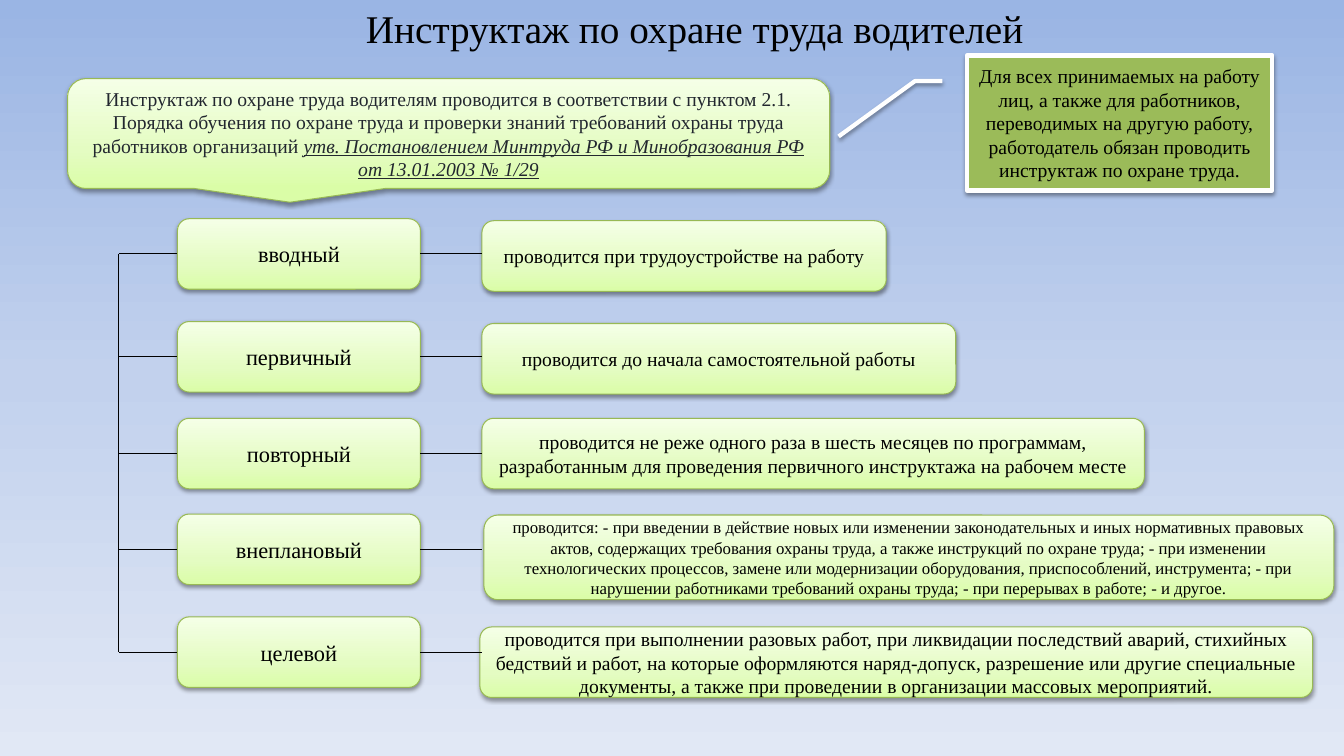
from pptx import Presentation
from pptx.dml.color import RGBColor
from pptx.enum.shapes import MSO_CONNECTOR, MSO_SHAPE as Preset
from pptx.enum.text import MSO_ANCHOR as Anchor, MSO_AUTO_SIZE as AutoSize, PP_ALIGN as Align
from pptx.oxml import parse_xml
from pptx.oxml.ns import nsdecls, qn
from pptx.util import Pt
from dataclasses import dataclass

EMU_PER_PX = 9144  # 100 px to the inch


@dataclass(frozen=True)
class Theme:
    font: str = "Times New Roman"
    text: str = "000000"
    law_text: str = "22272F"
    line: str = "000000"
    green_line: str = "98B955"
    note_fill: str = "9BBB59"
    note_line: str = "FFFFFF"
    background: tuple = ((0, "9AB5E4"), (50, "C2D1ED"), (100, "E1E8F5"))
    green: tuple = ((0, "DAFDA7"), (35, "E4FCC2"), (100, "F5FFE7"))
    title_size: int = 28
    type_size: int = 16
    body_size: int = 14
    small_size: int = 12
    thin: float = 0.75
    thick: float = 3


THEME = Theme()

TITLE = "Инструктаж по охране труда водителей"
LAW = ("Инструктаж по охране труда водителям проводится в соответствии с пунктом 2.1. "
       "Порядка обучения по охране труда и проверки знаний требований охраны труда "
       "работников организаций ")
LAW_SOURCE = ("утв. Постановлением Минтруда РФ и Минобразования РФ\v"
              "от 13.01.2003 № 1/29")
NOTE = ("Для всех принимаемых на работу лиц, а также для работников, переводимых на "
        "другую работу, работодатель обязан проводить инструктаж по охране труда.")

# Rows: type, its top, detail, box of the detail, text size of the detail
ROWS = [
    ("вводный", 217, "проводится при трудоустройстве на работу",
     (478, 219, 401, 70), THEME.body_size),
    ("первичный", 319, "проводится до начала самостоятельной работы",
     (478, 321, 470, 70), THEME.body_size),
    ("повторный", 415,
     "проводится не реже одного раза в шесть месяцев по программам, разработанным "
     "для проведения первичного инструктажа на рабочем месте",
     (478, 415, 657, 70), THEME.body_size),
    ("внеплановый", 510,
     "проводится: - при введении в действие новых или изменении законодательных и "
     "иных нормативных правовых актов, содержащих требования охраны труда, а также "
     "инструкций по охране труда; - при изменении технологических процессов, замене "
     "или модернизации оборудования, приспособлений, инструмента; - при нарушении "
     "работниками требований охраны труда; - при перерывах в работе; - и другое.",
     (480, 511, 843, 84), THEME.small_size),
    ("целевой", 612,
     "проводится при выполнении разовых работ, при ликвидации последствий аварий, "
     "стихийных бедствий и работ, на которые оформляются наряд-допуск, разрешение "
     "или другие специальные документы, а также при проведении в организации "
     "массовых мероприятий.",
     (476, 622, 826, 70), THEME.body_size),
]
TYPE_LEFT, TYPE_WIDTH, TYPE_HEIGHT = 176, 241, 70
TRUNK_X = 118
LINK_END = 478
LEFT_SIDE, RIGHT_SIDE = 1, 3


def px(*lengths):
    return [length * EMU_PER_PX for length in lengths]


def rgb(value):
    return RGBColor.from_string(value)


def set_gradient(fill, element, stops, angle):
    fill.gradient()
    fill.gradient_angle = angle
    stop_list = next(element.iter(qn("a:gsLst")))
    for stop in list(stop_list):
        stop_list.remove(stop)
    for position, colour in stops:
        stop_list.append(parse_xml(
            f'<a:gs {nsdecls("a")} pos="{position * 1000}">'
            f'<a:srgbClr val="{colour}"/></a:gs>'))


def add_shadow(shape):
    shape.shadow.inherit = False
    effects = next(shape.element.iter(qn("a:effectLst")))
    effects.append(parse_xml(
        f'<a:outerShdw {nsdecls("a")} blurRad="{Pt(3.1)}" dist="{Pt(1.6)}" '
        'dir="5400000" rotWithShape="0"><a:srgbClr val="000000">'
        '<a:alpha val="38000"/></a:srgbClr></a:outerShdw>'))


def write_text(shape, text, size, colour=THEME.text, **formats):
    """Append a run to the shape's centred paragraph."""
    shape.text_frame.word_wrap = True
    paragraph = shape.text_frame.paragraphs[0]
    paragraph.alignment = Align.CENTER
    for index, part in enumerate(text.split("\v")):
        if index:
            paragraph.add_line_break()
        run = paragraph.add_run()
        run.text = part
        run.font.color.rgb = rgb(colour)
        values = {"name": THEME.font, "size": Pt(size), **formats}
        for name, value in values.items():
            setattr(run.font, name, value)


def add_title(slide, box, text):
    title = slide.shapes.add_textbox(*px(*box))
    write_text(title, text, THEME.title_size)
    title.text_frame.auto_size = AutoSize.SHAPE_TO_FIT_TEXT


def add_box(slide, preset, box, line_colour, line_width):
    shape = slide.shapes.add_shape(preset, *px(*box))
    shape.line.color.rgb = rgb(line_colour)
    shape.line.width = Pt(line_width)
    shape.text_frame.vertical_anchor = Anchor.MIDDLE
    add_shadow(shape)
    return shape


def add_green_box(slide, box, preset=Preset.ROUNDED_RECTANGLE):
    shape = add_box(slide, preset, box, THEME.green_line, THEME.thin)
    set_gradient(shape.fill, shape.element, THEME.green, 90)
    return shape


def add_note(slide, box, text):
    note = add_box(slide, Preset.LINE_CALLOUT_2, box, THEME.note_line, THEME.thick)
    note.fill.solid()
    note.fill.fore_color.rgb = rgb(THEME.note_fill)
    for index, value in enumerate((0.19, -0.08, 0.19, -0.17, 0.6, -0.42)):
        note.adjustments[index] = value
    write_text(note, text, THEME.body_size)


def add_line(slide, start, end):
    line = slide.shapes.add_connector(MSO_CONNECTOR.STRAIGHT, *px(*start, *end))
    line.line.color.rgb = rgb(THEME.line)
    line.line.width = Pt(THEME.thin)
    line.element.spPr.append(parse_xml(f'<a:effectLst {nsdecls("a")}/>'))
    return line


def add_row(slide, name, top, detail, detail_box, detail_size):
    """Add a type, its detail and their lines; return the type's middle."""
    middle = top + TYPE_HEIGHT // 2
    type_box = add_green_box(slide, (TYPE_LEFT, top, TYPE_WIDTH, TYPE_HEIGHT))
    write_text(type_box, name, THEME.type_size)
    detail_shape = add_green_box(slide, detail_box)
    write_text(detail_shape, detail, detail_size)

    branch = add_line(slide, (TRUNK_X, middle), (TYPE_LEFT, middle))
    branch.end_connect(type_box, LEFT_SIDE)
    link = add_line(slide, (TYPE_LEFT + TYPE_WIDTH, middle), (LINK_END, middle))
    link.begin_connect(type_box, RIGHT_SIDE)
    if detail_box[1] + detail_box[3] // 2 == middle:
        link.end_connect(detail_shape, LEFT_SIDE)
    return middle


def main():
    presentation = Presentation()
    presentation.slide_width, presentation.slide_height = px(1333, 750)
    slide = presentation.slides.add_slide(presentation.slide_layouts[6])
    set_gradient(slide.background.fill, slide.element, THEME.background, 270)

    # Heading and legal basis
    add_title(slide, (168, -1, 1042, 57), TITLE)
    law = add_green_box(slide, (67, 78, 756, 109), Preset.ROUNDED_RECTANGULAR_CALLOUT)
    write_text(law, LAW, THEME.body_size, THEME.law_text)
    write_text(law, LAW_SOURCE, THEME.body_size, THEME.law_text,
               italic=True, underline=True)

    # Types of briefing, joined by a trunk
    middles = [add_row(slide, *row) for row in ROWS]
    add_line(slide, (TRUNK_X, middles[0]), (TRUNK_X, middles[-1]))

    # Employer's duty
    add_note(slide, (959, 55, 303, 134), NOTE)

    presentation.save("out.pptx")


if __name__ == "__main__":
    main()
